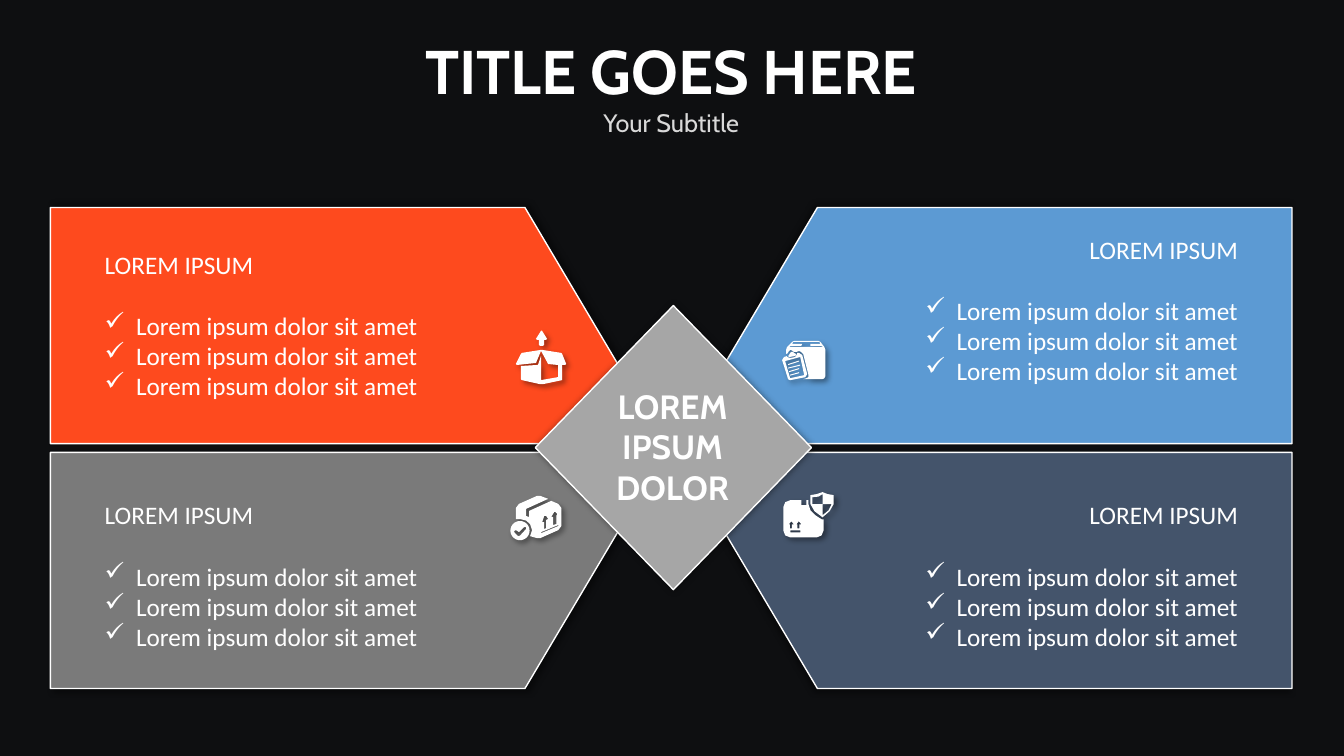
import math

import pptx
import pptx.dml.color
import pptx.enum.shapes
import pptx.enum.text
import pptx.oxml
import pptx.oxml.ns
import pptx.util

Cm = pptx.util.Cm
Pt = pptx.util.Pt
RGBColor = pptx.dml.color.RGBColor
Align = pptx.enum.text.PP_ALIGN

BACKDROP = RGBColor(0x0E, 0x0F, 0x11)
WHITE = RGBColor(0xFF, 0xFF, 0xFF)
PALE = RGBColor(0xD9, 0xD9, 0xD9)
ORANGE = RGBColor(0xFE, 0x4A, 0x1E)
BLUE = RGBColor(0x5C, 0x9A, 0xD3)
GRAY = RGBColor(0x7A, 0x7A, 0x7A)
SLATE = RGBColor(0x44, 0x54, 0x6B)
SILVER = RGBColor(0xA6, 0xA6, 0xA6)

ICON_UNIT = 0.0254
MIRROR_X, MIRROR_Y = 33.83, 22.58
PANEL = [(13.23, 5.23), (1.27, 5.23), (1.27, 11.18), (16.76, 11.18)]


def shifted(points, dx, dy=0):
    return [(x + dx, y + dy) for x, y in points]


def circle(x, y, radius, steps=32):
    turns = [2 * math.pi * step / steps for step in range(steps)]
    return [(x + radius * math.cos(t), y + radius * math.sin(t)) for t in turns]


def slanted_bar(x1, y1, x2, y2):
    return [(x1, y1), (x2, y2), (x2, y2 + 1), (x1, y1 + 1)]


UP_ARROW = [(16, 32), (16, 36), (14, 36), (14, 32), (13, 32), (15.5, 29), (18, 32)]

OPEN_BOX = [
    [(30, 10), (28, 10), (28, 15), (27, 16), (24, 16), (23, 15), (23, 10),
     (21, 10), (20, 9), (25, 1), (26, 1), (31, 9)],
    [(49, 35), (46, 35), (46, 50), (27, 54), (24, 54), (6, 50), (5, 49), (5, 36),
     (21, 35), (22, 35), (25, 26), (25, 50), (42, 47), (42, 35), (32, 34), (31, 32),
     (25, 21), (20, 33), (1, 35), (0, 34), (5, 24), (6, 23), (25, 20), (26, 20),
     (45, 23), (46, 24), (50, 34)],
]
CLIPBOARD_BOX = [
    [(42, 6), (38, 1), (36, 0), (12, 0), (10, 1), (5, 6), (4, 9), (4, 13), (6, 12),
     (6, 11), (8, 9), (9, 9), (12, 11), (14, 11), (17, 10), (19, 11), (21, 13),
     (26, 33), (26, 36), (24, 37), (21, 38), (40, 38), (42, 37), (43, 35), (43, 9)],
    [(7, 6), (8, 5), (19, 5), (20, 3), (10, 3), (11, 1), (37, 1), (38, 3), (28, 3),
     (28, 5), (39, 5), (41, 6)],
    [(25, 33), (20, 14), (17, 12), (15, 12), (15, 13), (13, 16), (8, 17), (5, 16),
     (5, 15), (2, 16), (0, 19), (6, 38), (8, 39), (23, 36)],
    [(8, 37), (3, 20), (18, 16), (22, 34)],
    [(7, 14), (6, 15), (7, 16), (13, 15), (14, 13), (12, 12), (11, 11), (9, 11), (8, 12)],
    slanted_bar(6, 23, 17, 19.5),
    slanted_bar(6, 26.5, 18, 23.5),
    slanted_bar(7, 30, 17, 27),
    slanted_bar(8, 33.5, 17, 31),
]
CHECKED_BOX = [
    circle(10, 35.5, 9.5),
    [(16, 34), (10, 40.5), (8, 41), (5, 38), (4, 36), (6, 35), (9, 37), (14, 32), (16, 32)],
    [(48, 9), (41, 6), (19, 16), (19, 22), (16, 21), (16, 14), (38, 4), (30, 1), (27, 1),
     (9, 9), (6, 13), (6, 24), (10, 24), (16, 25.5), (20, 29), (22, 35), (20, 41),
     (27, 43), (30, 43), (48, 35), (51, 31), (51, 13)],
    [(32, 27), (34, 21), (36, 21), (38, 24), (36, 25), (36, 33), (34, 34), (34, 27)],
    [(41, 22), (44, 17), (45, 17), (47, 19), (46, 21), (46, 29), (43, 30), (43, 22)],
    [(48, 30), (48, 31), (31, 38), (31, 37)],
]
SHIELD_BOX = [
    [(40, 27), (38, 27), (32, 23), (27, 18), (25, 12), (25, 8), (23, 8), (23, 13),
     (18, 13), (18, 8), (7, 8), (2, 10), (0, 15), (0, 38), (2, 43), (7, 45), (33, 45),
     (38, 43), (40, 38)],
    [(39, 0), (33, 2), (27, 3), (27, 12), (31, 19), (39, 25), (46, 19), (50, 12),
     (50, 3), (44, 2)],
    [(39, 23), (39, 12), (48, 12), (45, 18)],
    [(39, 12), (29, 12), (29, 5), (35, 4.5), (39, 2)],
    UP_ARROW,
    shifted(UP_ARROW, -7.5),
    [(7, 38), (17, 38), (17, 40), (7, 40)],
]


class Deck:
    display_font = "Cabin"
    body_font = "Calibri"

    def __init__(self):
        self.presentation = pptx.Presentation()
        self.presentation.slide_width = Cm(33.87)
        self.presentation.slide_height = Cm(19.05)
        self.slide = self.presentation.slides.add_slide(self.presentation.slide_layouts[5])
        backdrop = self.slide.background.fill
        backdrop.solid()
        backdrop.fore_color.rgb = BACKDROP

    def run(self, paragraph, text, size, font, color=WHITE, bold=False):
        run = paragraph.add_run()
        run.text = text
        run.font.size = Pt(size)
        run.font.name = font
        run.font.bold = bold
        run.font.color.rgb = color

    def paragraphs(self, frame, count, align):
        frame.word_wrap = True
        frame.auto_size = pptx.enum.text.MSO_AUTO_SIZE.SHAPE_TO_FIT_TEXT
        frame.vertical_anchor = pptx.enum.text.MSO_ANCHOR.TOP
        for _ in range(count - 1):
            frame.add_paragraph()
        for paragraph in frame.paragraphs:
            paragraph.alignment = align
        return frame.paragraphs

    def title(self, heading, subtitle):
        title = self.slide.shapes.title
        title.left, title.top, title.width, title.height = Cm(9.27), Cm(0.71), Cm(15.29), Cm(2.9)
        first, second = self.paragraphs(title.text_frame, 2, Align.CENTER)
        self.run(first, heading, 44, self.display_font, bold=True)
        self.run(second, subtitle, 18, self.display_font, PALE)

    def finish(self, shape, color, outlined, blur, distance, angle):
        shape.fill.solid()
        shape.fill.fore_color.rgb = color
        if outlined:
            shape.line.color.rgb = WHITE
            shape.line.width = Pt(1)
        else:
            shape.line.fill.background()
        shape.shadow.inherit = False
        effects = shape._element.spPr.find(pptx.oxml.ns.qn("a:effectLst"))
        effects.append(pptx.oxml.parse_xml(
            f'<a:outerShdw {pptx.oxml.ns.nsdecls("a")} blurRad="{Pt(blur)}" '
            f'dist="{Pt(distance)}" dir="{angle * 60000}" algn="ctr" rotWithShape="0">'
            '<a:srgbClr val="000000"><a:alpha val="40000"/></a:srgbClr></a:outerShdw>'))

    def outline(self, contours, color, outlined, angle):
        scaled = [[(Cm(x), Cm(y)) for x, y in contour] for contour in contours]
        builder = self.slide.shapes.build_freeform(*scaled[0][0], scale=1.0)
        for index, contour in enumerate(scaled):
            if index:
                builder.move_to(*contour[0])
            builder.add_line_segments(contour[1:], close=True)
        self.finish(builder.convert_to_shape(), color, outlined, 4, 3, angle)

    def icon(self, contours, left, top):
        placed = [[(left + x * ICON_UNIT, top + y * ICON_UNIT) for x, y in contour]
                  for contour in contours]
        self.outline(placed, WHITE, False, 45)

    def panel(self, color, on_right, on_bottom, angle):
        corners = [(MIRROR_X - x if on_right else x, MIRROR_Y - y if on_bottom else y)
                   for x, y in PANEL]
        self.outline([corners], color, True, angle)

    def hub(self, words):
        diamond = self.slide.shapes.add_shape(
            pptx.enum.shapes.MSO_SHAPE.DIAMOND, Cm(13.49), Cm(7.7), Cm(6.96), Cm(7.16))
        self.finish(diamond, SILVER, True, 5, 0, 0)
        label = self.slide.shapes.add_textbox(Cm(15.11), Cm(9.6), Cm(3.68), Cm(3.33))
        lines = self.paragraphs(label.text_frame, len(words), Align.CENTER)
        for line, word in zip(lines, words):
            self.run(line, word, 24, self.display_font, bold=True)
        self.slide.shapes.add_group_shape([diamond, label])

    def checklist(self, left, top, align, heading, items):
        box = self.slide.shapes.add_textbox(Cm(left), Cm(top), Cm(8.69), Cm(4.88))
        first, *checks = self.paragraphs(box.text_frame, 1 + len(items), align)
        self.run(first, heading, 18, self.body_font)
        for check, item in zip(checks, items):
            properties = check._p.get_or_add_pPr()
            properties.set("marL", str(Cm(0.79)))
            properties.set("indent", str(-Cm(0.79)))
            properties.append(pptx.oxml.parse_xml(
                f'<a:buChar {pptx.oxml.ns.nsdecls("a")} char="✓"/>'))
            self.run(check, item, 18, self.body_font)
        checks[0].space_before = Pt(22)


def main():
    deck = Deck()
    deck.title("TITLE GOES HERE", "Your Subtitle")
    for color, on_right, on_bottom, angle in [
            (BLUE, True, False, 225), (SLATE, True, True, 135),
            (ORANGE, False, False, 315), (GRAY, False, True, 45)]:
        deck.panel(color, on_right, on_bottom, angle)
    deck.hub(["LOREM", "IPSUM", "DOLOR"])
    for left, top, align in [(2.39, 6.15, Align.LEFT), (22.76, 5.77, Align.RIGHT),
                             (22.76, 12.47, Align.RIGHT), (2.39, 12.47, Align.LEFT)]:
        deck.checklist(left, top, align, "LOREM IPSUM", ["Lorem ipsum dolor sit amet"] * 3)
    for contours, left, top in [(CHECKED_BOX, 12.85, 12.47), (CLIPBOARD_BOX, 19.71, 8.59),
                                (SHIELD_BOX, 19.74, 12.4), (OPEN_BOX, 13, 8.31)]:
        deck.icon(contours, left, top)
    deck.presentation.save("out.pptx")


if __name__ == "__main__":
    main()
